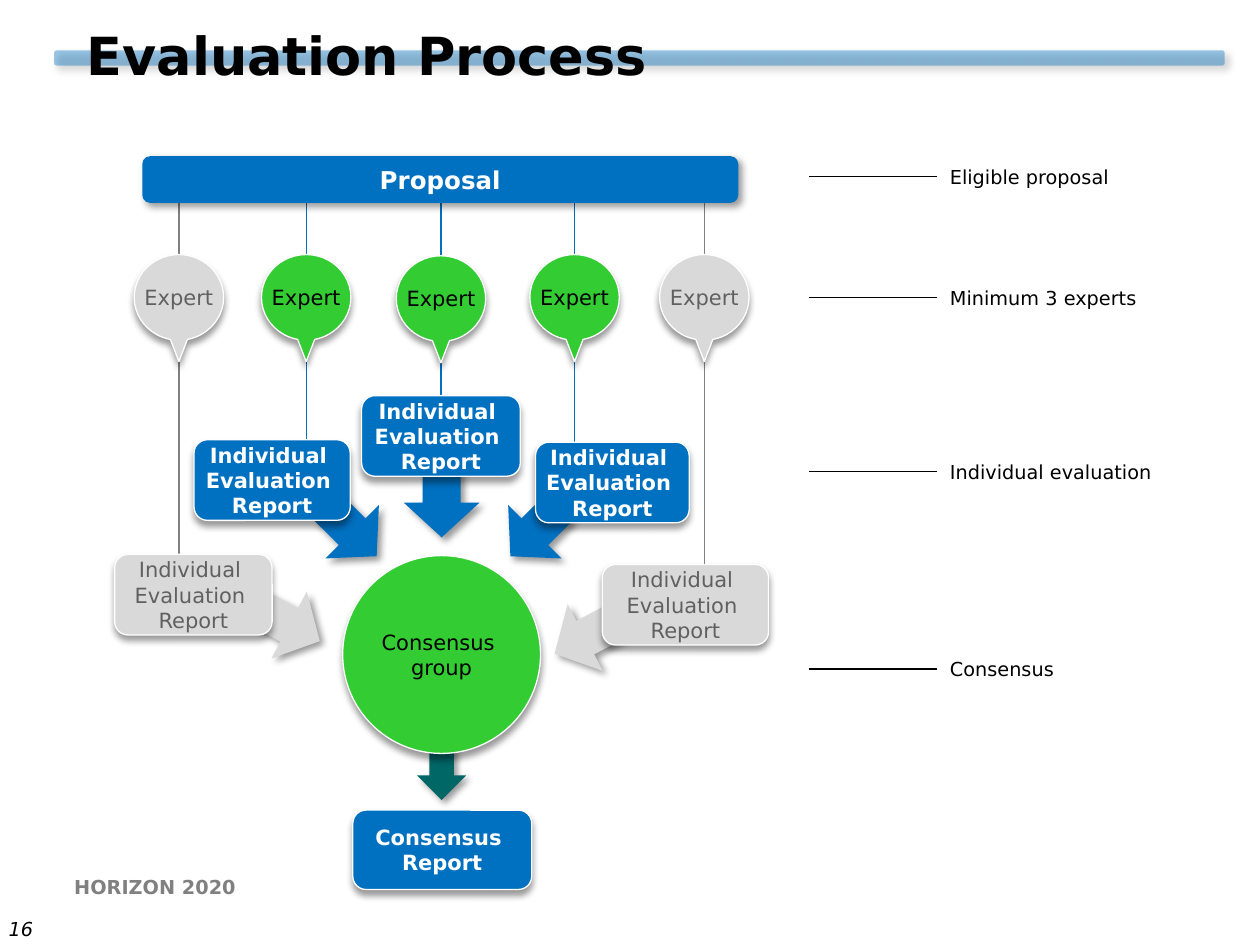
from lxml import etree
from pptx import Presentation
from pptx.dml.color import RGBColor as RGB
from pptx.enum.shapes import MSO_CONNECTOR as LINK, MSO_SHAPE as KIND
from pptx.enum.text import MSO_ANCHOR as ANCHOR, PP_ALIGN as ALIGN
from pptx.oxml import parse_xml
from pptx.oxml.ns import nsdecls, qn
from pptx.util import Inches, Pt

FONT = "DejaVu Sans"
BLUE = RGB(0x00, 0x70, 0xC0)
GREEN = RGB(0x33, 0xCC, 0x33)
TEAL = RGB(0x00, 0x66, 0x66)
PALE = RGB(0xD9, 0xD9, 0xD9)
GREY = RGB(0x80, 0x80, 0x80)
DARK = RGB(0x60, 0x60, 0x60)
BLACK = RGB(0, 0, 0)
WHITE = RGB(255, 255, 255)

REPORT = "Individual \nEvaluation \nReport"
# needed, centre x, callout top, report (left, top, width), arrow (left, top, angle)
EXPERTS = [
    (False, 1.42, 2.02, (0.91, 4.40, 1.25), (2.02, 4.66, 27.8)),
    (True, 2.43, 2.02, (1.54, 3.49, 1.24), (2.52, 3.92, 45)),
    (True, 3.50, 2.03, (2.87, 3.14, 1.26), (3.23, 3.69, 90)),
    (True, 4.56, 2.02, (4.25, 3.51, 1.22), (3.97, 3.92, 135)),
    (False, 5.59, 2.02, (4.78, 4.48, 1.32), (4.37, 4.76, 152.2)),
]
STAGES = [  # label, line height on the slide
    ("Eligible proposal", 1.40),
    ("Minimum 3 experts", 2.36),
    ("Individual evaluation", 3.74),
    ("Consensus", 5.31),
]
STAGE_X, LABEL_X = 6.42, 7.44
BAR_END = 1.6
CALL_W, CALL_H = 0.71, 0.68
REPORT_H = 0.64

deck = Presentation()
deck.slide_width, deck.slide_height = Inches(10), Inches(7.5)
slide = deck.slides.add_slide(deck.slide_layouts[6])
shapes = slide.shapes


def write(shape, text, size, color, bold=False, italic=False, align=ALIGN.CENTER):
    frame = shape.text_frame
    frame.text = text
    for para in frame.paragraphs:
        para.alignment = align
        font = para.font
        font.name, font.size = FONT, Pt(size)
        font.bold, font.italic = bold, italic
        font.color.rgb = color


def label(box, text, size, color=BLACK, bold=False, italic=False, anchor=ANCHOR.TOP):
    shape = shapes.add_textbox(*map(Inches, box))
    shape.text_frame.word_wrap = True
    shape.text_frame.vertical_anchor = anchor
    write(shape, text, size, color, bold, italic, ALIGN.LEFT)
    return shape


def cast(shape, angle):
    """Give the shape a soft outer shadow falling at the angle."""
    shape.shadow.inherit = False
    effects = shape._element.spPr.find(qn("a:effectLst"))
    effects.append(parse_xml(
        f'<a:outerShdw {nsdecls("a")} blurRad="{Pt(4)}" dist="{Pt(3)}" '
        f'dir="{angle * 60000}" algn="ctr" rotWithShape="0">'
        '<a:srgbClr val="000000"><a:alpha val="40000"/></a:srgbClr></a:outerShdw>'))


def block(kind, box, fill, edge=True):
    """Add a shadowed shape, with a white edge if asked."""
    shape = shapes.add_shape(kind, *map(Inches, box))
    shape.fill.solid()
    shape.fill.fore_color.rgb = fill
    if edge:
        shape.line.color.rgb = WHITE
        shape.line.width = Pt(0.75)
    else:
        shape.line.fill.background()
    cast(shape, 90 if edge else 45)
    shape.text_frame.vertical_anchor = ANCHOR.MIDDLE
    shape.text_frame.word_wrap = False
    return shape


def arrow(left, top, angle, fill, width=0.55, height=0.6):
    shape = block(KIND.RIGHT_ARROW, (left, top, width, height), fill, edge=False)
    shape.rotation = angle


def line(x1, y1, x2, y2, color):
    link = shapes.add_connector(LINK.STRAIGHT, *map(Inches, (x1, y1, x2, y2)))
    link.line.color.rgb = color
    link.line.width = Pt(0.75)
    etree.SubElement(link._element.spPr, qn("a:effectLst"))


# Frame of the slide
rule = block(KIND.ROUNDED_RECTANGLE, (0.43, 0.4, 9.29, 0.12), BLUE, edge=False)
tint = rule._element.spPr.find(qn("a:solidFill"))[0]
etree.SubElement(tint, qn("a:alpha")).set("val", "39000")
label((0.49, 6.9, 2.05, 0.29), "HORIZON 2020", 11, GREY, bold=True)
label((-0.03, 7.11, 0.52, 0.4), "16", 11, italic=True, anchor=ANCHOR.BOTTOM)
label((0.59, 0.13, 9, 1.02), "Evaluation Process", 30, bold=True)

# Lines from the proposal to the reports
for need, x, _, (_, top, _), _ in EXPERTS:
    line(x, BAR_END, x, top, BLUE if need else GREY)

# Reports and their arrows
for need, _, _, (left, top, width), turn in EXPERTS:
    fill = BLUE if need else PALE
    arrow(*turn, fill)
    box = block(KIND.ROUNDED_RECTANGLE, (left, top, width, REPORT_H), fill)
    write(box, REPORT, 12, WHITE if need else DARK, bold=need)

# Consensus
arrow(3.23, 5.88, 90, TEAL, height=0.39)
group = block(KIND.OVAL, (2.72, 4.41, 1.57, 1.57), GREEN)
write(group, "Consensus \vgroup", 12, BLACK)
final = block(KIND.ROUNDED_RECTANGLE, (2.8, 6.43, 1.42, 0.63), BLUE)
write(final, "Consensus \nReport", 12, WHITE, bold=True)

# Experts
for need, x, top, _, _ in EXPERTS:
    call = block(KIND.OVAL_CALLOUT, (x - CALL_W / 2, top, CALL_W, CALL_H),
                 GREEN if need else PALE)
    call.adjustments[0], call.adjustments[1] = 0, 0.75
    write(call, "Expert", 12, BLACK if need else DARK)

# Stages
for text, y in STAGES:
    label((LABEL_X, y - 0.14, 1.89, 0.29), text, 11)
    line(LABEL_X, y, STAGE_X, y, BLACK)

bar = block(KIND.ROUNDED_RECTANGLE, (1.13, 1.24, 4.73, 0.37), BLUE, edge=False)
write(bar, "Proposal", 14, WHITE, bold=True)

deck.save("out.pptx")
